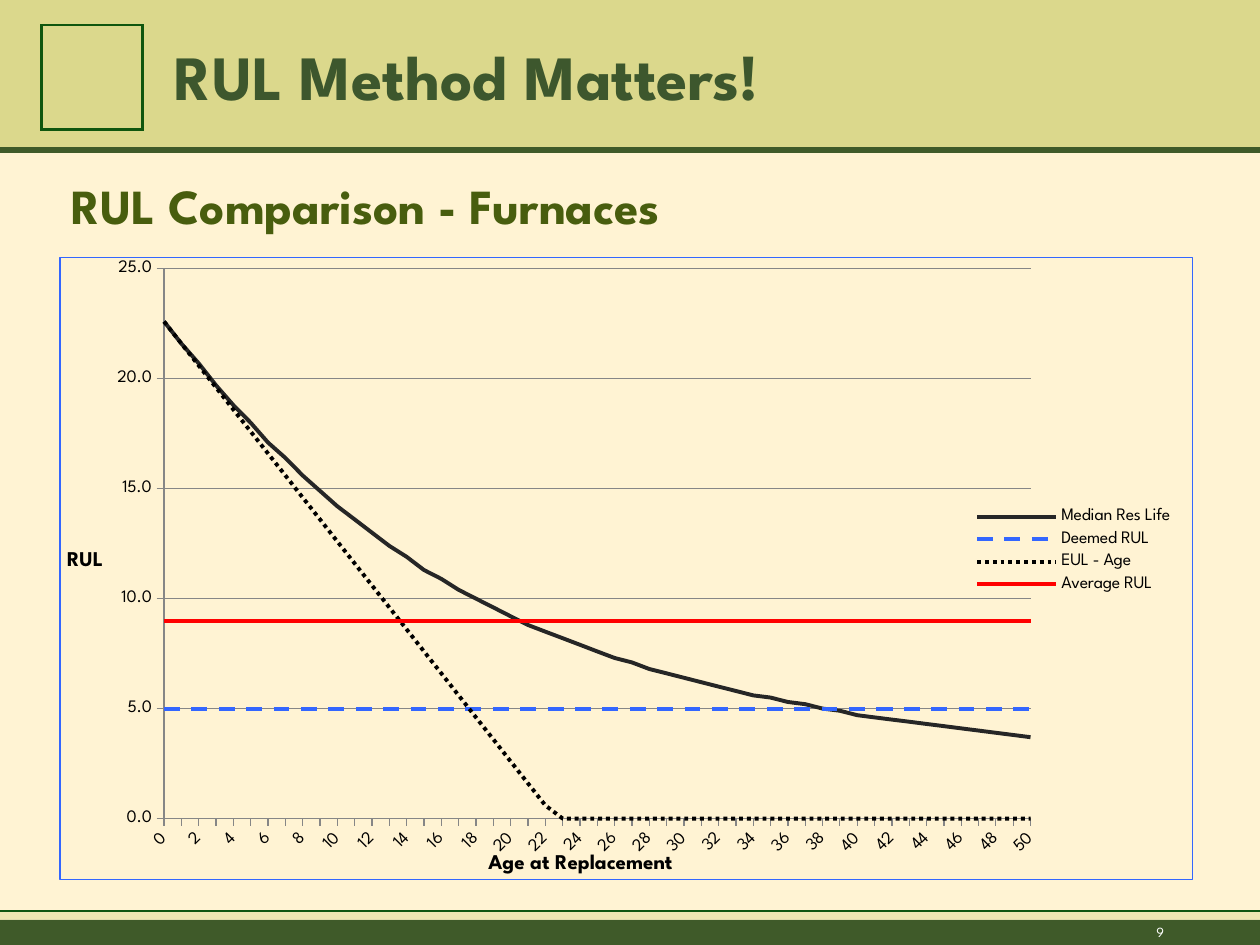
from dataclasses import dataclass
from lxml.etree import SubElement
from pptx import Presentation
from pptx.chart.data import CategoryChartData
from pptx.dml.color import RGBColor
from pptx.enum.chart import XL_CHART_TYPE as CT, XL_LEGEND_POSITION as LP, XL_TICK_MARK as TM
from pptx.enum.dml import MSO_LINE as DASH
from pptx.enum.shapes import MSO_CONNECTOR as MC, MSO_SHAPE as MS
from pptx.enum.text import MSO_ANCHOR as ANCHOR
from pptx.oxml import parse_xml
from pptx.oxml.ns import nsdecls, qn
from pptx.util import Inches, Pt

W, H = 10, 7.5


@dataclass(frozen=True)
class Theme:
    """Colours and type sizes of the slide."""
    font: str = "League Spartan"
    paper: str = "FFF3D3"
    band: str = "C1C659"
    strip: str = "CCCF6B"
    olive: str = "3F5A29"
    frame: str = "0F560E"
    title: str = "3D572D"
    heading: str = "485D0E"
    white: str = "FFFFFF"
    black: str = "000000"
    grid: str = "868686"
    blue: str = "3366FF"
    curve: str = "262626"
    red: str = "FF0000"
    title_size: int = 36
    heading_size: int = 28
    axis_size: int = 12
    chart_size: int = 10
    number_size: int = 8


T = Theme()
MEDIAN = [22.6, 21.6, 20.7, 19.7, 18.8, 18, 17.1, 16.4, 15.6, 14.9, 14.2, 13.6, 13,
          12.4, 11.9, 11.3, 10.9, 10.4, 10, 9.6, 9.2, 8.8, 8.5, 8.2, 7.9, 7.6, 7.3,
          7.1, 6.8, 6.6, 6.4, 6.2, 6, 5.8, 5.6, 5.5, 5.3, 5.2, 5, 4.9, 4.7, 4.6, 4.5,
          4.4, 4.3, 4.2, 4.1, 4, 3.9, 3.8, 3.7]
AGES = range(len(MEDIAN))
SERIES = [
    ("Median Res Life", MEDIAN, T.curve, None),
    ("Deemed RUL", [5 for _ in AGES], T.blue, DASH.DASH),
    ("EUL - Age", [max(0, round(MEDIAN[0] - age, 1)) for age in AGES], T.black, DASH.ROUND_DOT),
    ("Average RUL", [9 for _ in AGES], T.red, None),
]


def rgb(code):
    """Turn a hex code into a colour."""
    return RGBColor.from_string(code)


def style_font(font, size, color, bold=False):
    """Set the theme font with size, colour and weight."""
    font.name, font.size, font.bold = T.font, Pt(size), bold
    font.color.rgb = rgb(color)


def style_line(line, color, width, dash=None):
    """Set colour, width and dash of a line."""
    line.color.rgb, line.width = rgb(color), Pt(width)
    if dash:
        line.dash_style = dash


def add_text(s, box, text, size, color, bold=False, anchor=ANCHOR.TOP):
    """Place one line of text in a box."""
    tf = s.shapes.add_textbox(*map(Inches, box)).text_frame
    tf.word_wrap, tf.vertical_anchor = True, anchor
    p = tf.paragraphs[0]
    p.text = text
    style_font(p.font, size, color, bold)


def add_band(s, box, color, alpha=100):
    """Place a borderless rectangle of the given opacity."""
    sp = s.shapes.add_shape(MS.RECTANGLE, *map(Inches, box))
    sp.shadow.inherit = False
    sp.line.fill.background()
    sp.fill.solid()
    sp.fill.fore_color.rgb = rgb(color)
    if alpha < 100:
        clr = next(sp._element.spPr.iter(qn("a:srgbClr")))
        SubElement(clr, qn("a:alpha"), val=str(alpha * 1000))


def add_rule(s, y, color, width):
    """Draw a line across the slide."""
    ln = s.shapes.add_connector(MC.STRAIGHT, 0, Inches(y), Inches(W), Inches(y))
    style_line(ln.line, color, width)
    SubElement(ln._element.spPr, qn("a:effectLst"))


def add_emblem(s, box):
    """Place the one-cell outlined table."""
    table = s.shapes.add_table(1, 1, *map(Inches, box)).table
    table.first_row = table.horz_banding = False
    cell = table.cell(0, 0)
    cell.fill.background()
    tc_pr = cell._tc.get_or_add_tcPr()
    for i, side in enumerate("LRTB"):
        tc_pr.insert(i, parse_xml(
            f'<a:ln{side} {nsdecls("a")} w="{Pt(1.5)}"><a:solidFill>'
            f'<a:srgbClr val="{T.frame}"/></a:solidFill></a:ln{side}>'))


def header(s, box):
    """Draw the title band with its emblem and rule."""
    x, y, w, h = box
    add_band(s, box, T.band, 58)
    add_rule(s, y + h + 0.01, T.olive, 3)
    add_emblem(s, (x + 0.033 * w, y + 0.17 * h, 0.08 * w, 0.7 * h))
    add_text(s, (x + 0.129 * w, y + 0.21 * h, 0.818 * w, 0.6 * h), "RUL Method Matters!",
             T.title_size, T.title, True, ANCHOR.MIDDLE)


def footer(s, box):
    """Draw the footer bands and the slide number."""
    x, y, w, h = box
    strip = 0.26 * h
    add_band(s, (x, y + strip, w, h - strip), T.olive)
    add_band(s, (x, y, w, strip), T.strip, 33)
    add_rule(s, y, T.frame, 0.75)
    add_text(s, (x + 0.908 * w, y + 0.05, 0.089 * w, 0.23), "9", T.number_size, T.white)


def set_layout(parent, after, inner=False, **shares):
    """Fix the place of a chart part, right after a given child."""
    for old in parent.findall(qn("c:layout")):
        parent.remove(old)
    rules = {"xMode": "edge", "yMode": "edge", **shares}
    target = '<c:layoutTarget val="inner"/>' if inner else ""
    body = "".join(f'<c:{k} val="{v}"/>' for k, v in rules.items())
    layout = parse_xml(f'<c:layout {nsdecls("c")}><c:manualLayout>{target}{body}'
                       '</c:manualLayout></c:layout>')
    parent.insert(0 if after is None else parent.index(parent.find(qn(after))) + 1, layout)


def style_axis(axis, title, rotation, **place):
    """Style an axis and place its title."""
    axis.major_tick_mark, axis.minor_tick_mark = TM.OUTSIDE, TM.NONE
    style_line(axis.format.line, T.grid, 0.75)
    style_font(axis.tick_labels.font, T.chart_size, T.black)
    axis._element.find(qn("c:txPr")).find(qn("a:bodyPr")).set("rot", str(rotation * 60000))
    tf = axis.axis_title.text_frame
    tf.text = title
    tf._txBody.bodyPr.set("rot", "0")
    style_font(tf.paragraphs[0].font, T.axis_size, T.black, True)
    set_layout(axis.axis_title._element, "c:tx", **place)


def comparison_chart(s, box):
    """Place the line chart of remaining life by age."""
    data = CategoryChartData(number_format="0.0")
    data.categories = [str(age) for age in AGES]
    for name, values, *_ in SERIES:
        data.add_series(name, values)
    chart = s.shapes.add_chart(CT.LINE, *map(Inches, box), data).chart
    chart.has_title, chart.has_legend = False, True
    style_font(chart.font, T.chart_size, T.black)
    chart.plots[0].vary_by_categories = False
    for ser, (_, _, color, dash) in zip(chart.plots[0].series, SERIES):
        ser.smooth = False
        style_line(ser.format.line, color, 2.25, dash)

    cat, val = chart.category_axis, chart.value_axis
    style_axis(cat, "Age at Replacement", -45, x=0.375, y=0.95)
    style_axis(val, "RUL", 0, x=0.003, y=0.463)
    for tag, step in (("c:tickLblSkip", "2"), ("c:tickMarkSkip", "1")):
        skip = SubElement(cat._element, qn(tag), val=step)
        cat._element.find(qn("c:noMultiLvlLbl")).addprevious(skip)
    val.minimum_scale, val.maximum_scale, val.major_unit = 0, 25, 5
    val.tick_labels.number_format, val.tick_labels.number_format_is_linked = "0.0", False
    style_line(val.major_gridlines.format.line, T.grid, 0.75)
    for old in val._element.findall(qn("c:crossBetween")):
        val._element.remove(old)
    val._element.find(qn("c:crosses")).addnext(
        parse_xml(f'<c:crossBetween {nsdecls("c")} val="midCat"/>'))

    chart.legend.position, chart.legend.include_in_layout = LP.RIGHT, True
    set_layout(chart.legend._element, "c:legendPos", x=0.8, y=0.393, w=0.19, h=0.156)
    root = chart._chartSpace.find(qn("c:chart"))
    set_layout(root.find(qn("c:plotArea")), None, True, x=0.092, y=0.018, w=0.765, h=0.884)
    root.addnext(parse_xml(
        f'<c:spPr {nsdecls("c", "a")}><a:noFill/><a:ln w="{Pt(0.75)}"><a:solidFill>'
        f'<a:srgbClr val="{T.blue}"/></a:solidFill></a:ln></c:spPr>'))


def content(s, box):
    """Place the heading with the chart below it."""
    x, y, w, h = box
    add_text(s, (x, y, w, 0.64), "RUL Comparison - Furnaces", T.heading_size, T.heading, True)
    comparison_chart(s, (x, y + 0.7, w, h - 0.7))


def main():
    """Build the slide and save it."""
    prs = Presentation()
    prs.slide_width, prs.slide_height = Inches(W), Inches(H)
    s = prs.slides.add_slide(prs.slide_layouts[6])
    s.background.fill.solid()
    s.background.fill.fore_color.rgb = rgb(T.paper)
    header(s, (0, 0, W, 1.18))
    footer(s, (0, 7.23, W, 0.27))
    content(s, (0.047 * W, 1.34, 0.9 * W, 5.65))
    prs.save("out.pptx")


if __name__ == "__main__":
    main()
